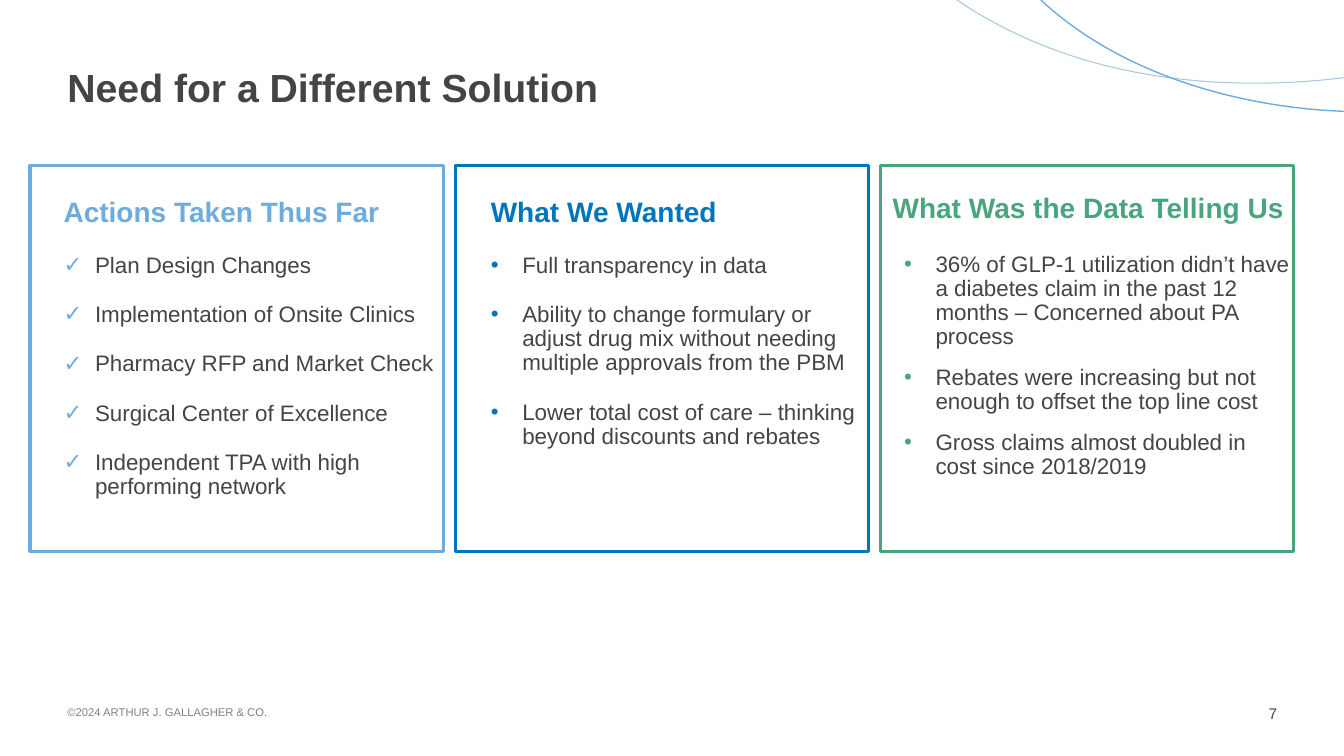
import pptx
import pptx.dml.color
import pptx.enum.text
import pptx.enum.shapes
import pptx.oxml.ns
import pptx.util
from lxml import etree

Pt = pptx.util.Pt
RGBColor = pptx.dml.color.RGBColor
Align = pptx.enum.text.PP_ALIGN
Anchor = pptx.enum.text.MSO_ANCHOR
AutoSize = pptx.enum.text.MSO_AUTO_SIZE
qn = pptx.oxml.ns.qn

INK = RGBColor(0x44, 0x44, 0x44)
GREY = RGBColor(0x80, 0x80, 0x80)
SKY = RGBColor(0x6E, 0xAC, 0xDD)
PALE = RGBColor(0xA4, 0xC8, 0xE1)
BLUE = RGBColor(0x00, 0x75, 0xBC)
GREEN = RGBColor(0x4A, 0xA5, 0x7F)

FONT = "Arial"
INDENT = 22.5
CARD_LEFT, CARD_TOP, CARD_WIDTH, CARD_HEIGHT = 21.5, 118, 295.2, 275.8
CARD_STEP = 303.6
CARD_BOTTOM = CARD_TOP + CARD_HEIGHT
TEXT_TOP = 141.8
LIST_TOP = 180.5


class SlideBuilder:
    def __init__(self, slide):
        self.slide = slide

    def curve(self, start, control_1, control_2, end, color, width):
        """Draw a cubic curve as a fine open polyline."""
        steps = 40
        points = []
        for step in range(steps + 1):
            t = step / steps
            weights = ((1 - t) ** 3, 3 * t * (1 - t) ** 2, 3 * t * t * (1 - t), t ** 3)
            corners = (start, control_1, control_2, end)
            points.append(tuple(Pt(sum(w * corner[axis] for w, corner in zip(weights, corners)))
                                for axis in (0, 1)))
        builder = self.slide.shapes.build_freeform(*points[0])
        builder.add_line_segments(points[1:], close=False)
        self.outline(builder.convert_to_shape(), color, width)

    def outline(self, shape, color, width):
        shape.shadow.inherit = False
        shape.fill.background()
        shape.line.color.rgb = color
        shape.line.width = Pt(width)

    def frame(self, left, color):
        shape = self.slide.shapes.add_shape(
            pptx.enum.shapes.MSO_SHAPE.RECTANGLE,
            Pt(left), Pt(CARD_TOP), Pt(CARD_WIDTH), Pt(CARD_HEIGHT))
        self.outline(shape, color, 2.25)

    def place(self, shape, left, top, width, height, anchor=Anchor.TOP, wrap=True):
        shape.left, shape.top, shape.width, shape.height = map(Pt, (left, top, width, height))
        text_frame = shape.text_frame
        text_frame.margin_left = text_frame.margin_right = 0
        text_frame.margin_top = text_frame.margin_bottom = 0
        text_frame.word_wrap = wrap
        text_frame.auto_size = AutoSize.NONE if wrap else AutoSize.SHAPE_TO_FIT_TEXT
        text_frame.vertical_anchor = anchor
        return text_frame

    def box(self, left, top, width, height, **options):
        shape = self.slide.shapes.add_textbox(0, 0, 0, 0)
        return self.place(shape, left, top, width, height, **options)

    def style_text(self, paragraph, text, size, color, bold=False, align=Align.LEFT,
                   spacing=0.9, after=0):
        paragraph.text = text
        paragraph.alignment = align
        paragraph.line_spacing = spacing
        paragraph.space_before = Pt(0)
        paragraph.space_after = Pt(after)
        for run in paragraph.runs:
            run.font.name = FONT
            run.font.size = Pt(size)
            run.font.bold = bold
            run.font.color.rgb = color

    def bullet(self, paragraph, mark, color):
        properties = paragraph._p.get_or_add_pPr()
        properties.set("marL", str(Pt(INDENT)))
        properties.set("indent", str(-Pt(INDENT)))
        bullet_color = etree.SubElement(properties, qn("a:buClr"))
        etree.SubElement(bullet_color, qn("a:srgbClr"), val=str(color))
        etree.SubElement(properties, qn("a:buFont"), typeface=FONT)
        etree.SubElement(properties, qn("a:buChar"), char=mark)

    def bullets(self, text_frame, items, mark, color, after, heading=None):
        paragraph = text_frame.paragraphs[0]
        if heading:
            self.style_text(paragraph, heading, 20, color, bold=True, after=after)
            paragraph = text_frame.add_paragraph()
        for number, item in enumerate(items):
            if number:
                paragraph = text_frame.add_paragraph()
            self.style_text(paragraph, item, 16, INK, after=after)
            self.bullet(paragraph, mark, color)

    def title(self, text):
        text_frame = self.place(self.slide.shapes.title, 48.2, 49, 735.8, 38.2)
        self.style_text(text_frame.paragraphs[0], text, 28, INK, bold=True)


def main():
    presentation = pptx.Presentation()
    presentation.slide_width, presentation.slide_height = Pt(960), Pt(540)
    slide = presentation.slides.add_slide(presentation.slide_layouts[5])
    builder = SlideBuilder(slide)

    # Corner curves
    builder.curve((960, 55.5), (895, 63.5), (780, 65.5), (683.5, 0), PALE, 0.75)
    builder.curve((960, 79.5), (888.5, 77), (802, 54.5), (743.5, 0), SKY, 1)

    builder.title("Need for a Different Solution")

    # Cards with the heading inside the list
    headed_cards = [
        (45.4, "Actions Taken Thus Far", "✓", SKY, [
            "Plan Design Changes",
            "Implementation of Onsite Clinics",
            "Pharmacy RFP and Market Check",
            "Surgical Center of Excellence",
            "Independent TPA with high performing network"]),
        (350.6, "What We Wanted", "•", BLUE, [
            "Full transparency in data",
            "Ability to change formulary or adjust drug mix without needing "
            "multiple approvals from the PBM",
            "Lower total cost of care – thinking beyond discounts and rebates"]),
    ]
    for left, heading, mark, color, items in headed_cards:
        text_frame = builder.box(left, TEXT_TOP, 266.4, CARD_BOTTOM - TEXT_TOP)
        builder.bullets(text_frame, items, mark, color, 18, heading)

    # Data card with its own centred heading
    data_items = [
        "36% of GLP-1 utilization didn’t have a diabetes claim in the past 12 months "
        "– Concerned about PA process",
        "Rebates were increasing but not enough to offset the top line cost",
        "Gross claims almost doubled in cost since 2018/2019"]
    text_frame = builder.box(645.8, LIST_TOP, 277.9, CARD_BOTTOM - LIST_TOP)
    builder.bullets(text_frame, data_items, "•", GREEN, 12)
    text_frame = builder.box(628.6, 139, 297.4, 38.2)
    builder.style_text(text_frame.paragraphs[0], "What Was the Data Telling Us", 20, GREEN,
                       bold=True, align=Align.CENTER, after=6)

    # Card frames
    for column, color in enumerate((SKY, BLUE, GREEN)):
        builder.frame(CARD_LEFT + column * CARD_STEP, color)

    # Footer
    text_frame = builder.box(48.2, 504, 144.7, 9.4, anchor=Anchor.MIDDLE, wrap=False)
    builder.style_text(text_frame.paragraphs[0], "©2024 ARTHUR J. GALLAGHER & CO.", 8, GREY,
                       spacing=1.0)
    text_frame = builder.box(898.6, 502.6, 13.7, 13.7, wrap=False)
    builder.style_text(text_frame.paragraphs[0], "7", 11, INK, align=Align.RIGHT, spacing=1.0)

    presentation.save("out.pptx")


if __name__ == "__main__":
    main()
